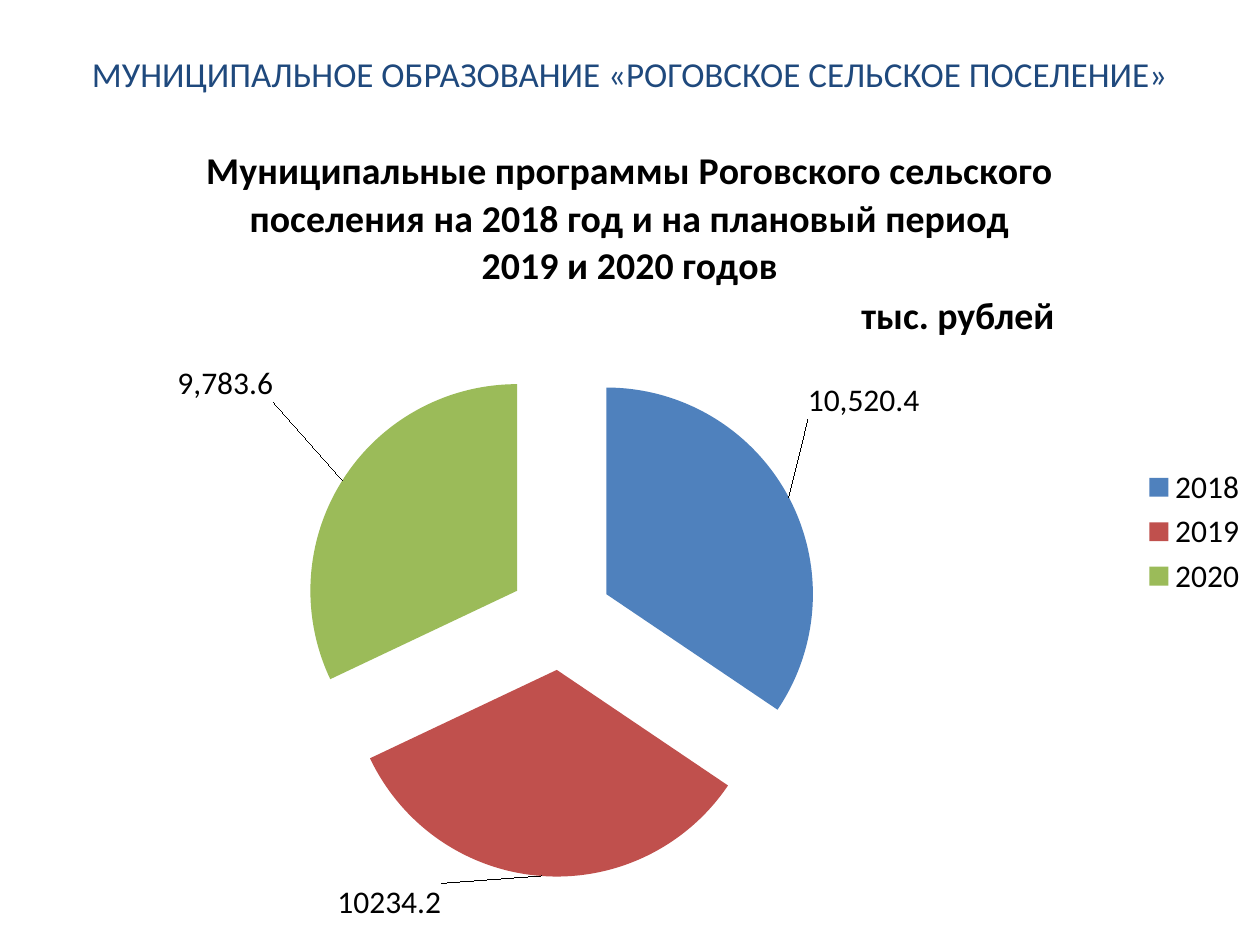
from lxml import etree
from pptx import Presentation
from pptx import util as u
from pptx.chart import data as chart_data
from pptx.dml.color import RGBColor
from pptx.enum import chart as charts, text
from pptx.oxml import ns

COLORS = {"heading": "1F497D", "ink": "000000",
          "2018": "4F81BD", "2019": "C0504D", "2020": "9BBB59"}
PROGRAMS = [("2018", 10520.4, "#,##0.0", (0.01, -0.09)),
            ("2019", 10234.2, "General", (-0.12, 0)),
            ("2020", 9783.6, "#,##0.0", (-0.05, -0.09))]
CHART_TITLE = ["Муниципальные программы Роговского сельского",
               "поселения на 2018 год и на плановый период",
               "2019 и 2020 годов"]


def element(tag, **attributes):
    return etree.Element(ns.qn(tag), attributes)


def manual_layout(**settings):
    layout = element("c:layout")
    manual = etree.SubElement(layout, ns.qn("c:manualLayout"))
    for name, value in settings.items():
        etree.SubElement(manual, ns.qn("c:" + name), val=str(value))
    return layout


class SlideBuilder:
    font_name = "Calibri"

    def __init__(self, deck):
        self.page = deck.slides.add_slide(deck.slide_layouts[5])

    def style(self, font, size, color="ink", bold=False):
        font.name = self.font_name
        font.size = u.Pt(size)
        font.bold = bold
        font.color.rgb = RGBColor.from_string(COLORS[color])

    def fill_text(self, box, wording, size, align, color="ink", bold=False):
        frame = box.text_frame
        frame.word_wrap = True
        frame.auto_size = text.MSO_AUTO_SIZE.NONE
        frame.vertical_anchor = text.MSO_ANCHOR.MIDDLE
        frame.text = wording
        paragraph = frame.paragraphs[0]
        paragraph.alignment = align
        self.style(paragraph.font, size, color, bold)

    def title(self, wording, left, top, width, height):
        box = self.page.shapes.title
        box.left, box.top = u.Inches(left), u.Inches(top)
        box.width, box.height = u.Inches(width), u.Inches(height)
        self.fill_text(box, wording, 20, text.PP_ALIGN.CENTER, "heading")

    def label(self, wording, left, top, width, height):
        box = self.page.shapes.add_textbox(*map(u.Inches, (left, top, width, height)))
        self.fill_text(box, wording, 21.6, text.PP_ALIGN.RIGHT, bold=True)

    def pie(self, programs, title_lines, left, top, width, height):
        data = chart_data.CategoryChartData()
        data.categories = [year for year, *rest in programs]
        data.add_series("Series 1", [amount for year, amount, *rest in programs])
        chart = self.page.shapes.add_chart(
            charts.XL_CHART_TYPE.PIE, *map(u.Inches, (left, top, width, height)), data).chart
        self.style(chart.font, 18)
        self.chart_title(chart, title_lines)
        chart.has_legend = True
        chart.legend.position = charts.XL_LEGEND_POSITION.RIGHT
        chart.legend.include_in_layout = False
        self.style(chart.legend.font, 18)

        plot = chart.plots[0]
        plot.vary_by_categories = True
        area = plot._element.getparent()
        for old in area.findall(ns.qn("c:layout")):
            area.remove(old)
        area.insert(0, manual_layout(layoutTarget="inner", xMode="edge", yMode="edge",
                                     x=0.24, y=0.29, w=0.41, h=0.63))
        series = plot.series[0]
        series._element.find(ns.qn("c:tx")).addnext(element("c:explosion", val="25"))
        series.data_labels.show_value = True
        self.style(series.data_labels.font, 18)
        for index, (year, amount, number_format, offset) in enumerate(programs):
            self.slice(series.points[index], year, number_format, offset)

    def chart_title(self, chart, lines):
        chart.has_title = True
        frame = chart.chart_title.text_frame
        frame.text = "\n".join(lines)
        for paragraph in frame.paragraphs:
            paragraph.alignment = text.PP_ALIGN.CENTER
            self.style(paragraph.font, 21.6, bold=True)
        chart.chart_title.include_in_layout = False

    def slice(self, point, year, number_format, offset):
        point.format.fill.solid()
        point.format.fill.fore_color.rgb = RGBColor.from_string(COLORS[year])
        label = point.data_label
        label.position = charts.XL_LABEL_POSITION.OUTSIDE_END
        self.style(label.font, 18)
        index = label._dLbl.find(ns.qn("c:idx")) if hasattr(label, "_dLbl") else None
        index.addnext(element("c:numFmt", formatCode=number_format, sourceLinked="0"))
        index.addnext(manual_layout(x=offset[0], y=offset[1]))


def main():
    deck = Presentation()
    deck.slide_width, deck.slide_height = u.Inches(10), u.Inches(7.5)
    builder = SlideBuilder(deck)
    builder.title("МУНИЦИПАЛЬНОЕ ОБРАЗОВАНИЕ «РОГОВСКОЕ СЕЛЬСКОЕ ПОСЕЛЕНИЕ»",
                  0.5, 0.3, 9, 0.56)
    builder.pie(PROGRAMS, CHART_TITLE, 0, 0.94, 10, 6.56)
    builder.label("тыс. рублей", 6.47, 2.27, 2, 0.45)
    deck.save("out.pptx")


if __name__ == "__main__":
    main()
